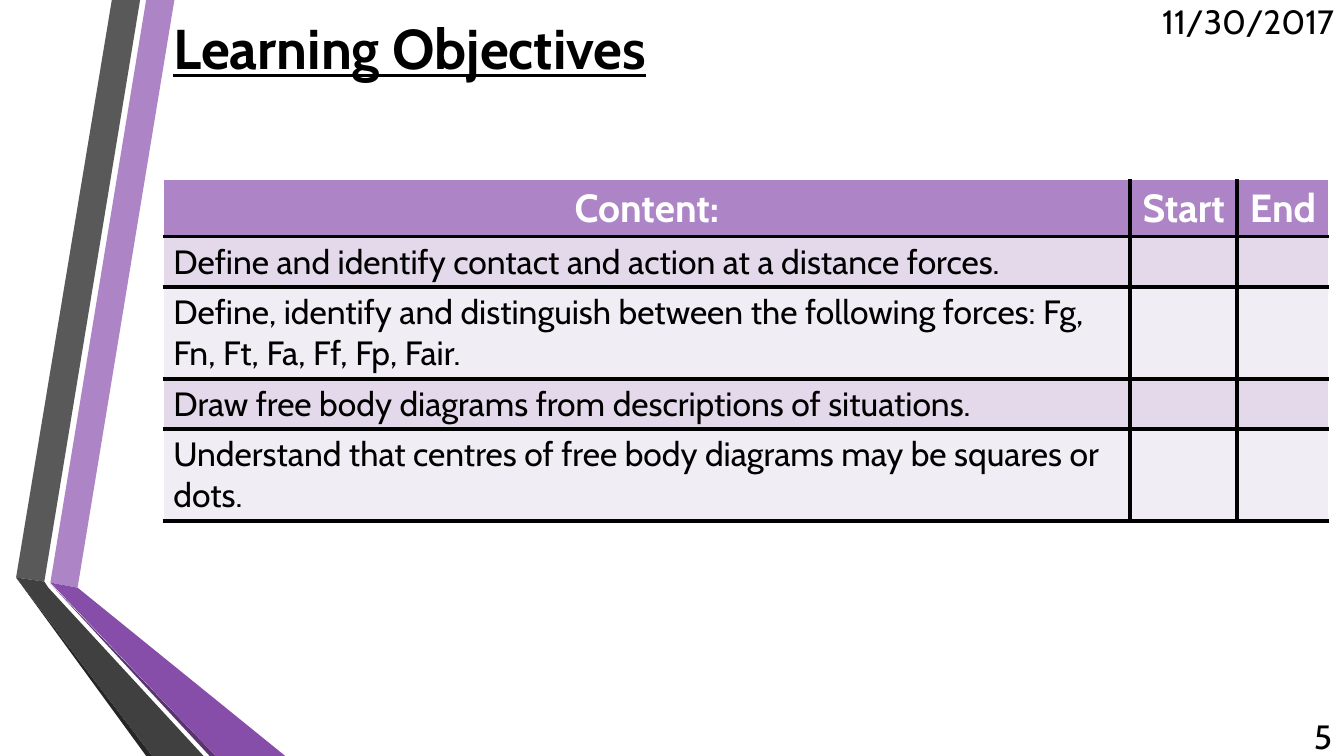
from dataclasses import dataclass

from lxml.etree import SubElement
from pptx import Presentation
from pptx.dml.color import RGBColor as Rgb
from pptx.enum.text import MSO_ANCHOR as Anchor, PP_ALIGN as Align
from pptx.oxml.ns import qn
from pptx.util import Inches, Pt

COLOURS = {
    "black": "000000", "white": "FFFFFF",
    "lilac": "AD84C6", "violet": "874EA9", "plum": "5A3471",
    "grey": "595959", "charcoal": "404040", "soot": "262626",
    "band_dark": "E3D9EA", "band_light": "F1EDF5",
}
TITLE_FORMAT = {"size": Pt(40), "bold": True, "underline": True}
HEADER_FORMAT = {"size": Pt(28), "bold": True}
BODY_FORMAT = {"size": Pt(24), "bold": False}
HEADINGS = ["Content:", "Start", "End"]
OBJECTIVES = [
    "Define and identify contact and action at a distance forces.",
    "Define, identify and distinguish between the following forces: "
    "Fg, Fn, Ft, Fa, Ff, Fp, Fair.",
    "Draw free body diagrams from descriptions of situations.",
    "Understand that centres of free body diagrams may be squares or dots.",
]
COLUMN_WIDTHS = [9.59, 1.06, 0.91]
ROW_HEIGHTS = [0.56, 0.5, 0.91, 0.5, 0.91]


@dataclass
class Ribbon:
    """A filled outline of the side decoration, in inches."""
    colour: str
    points: list[tuple[float, float]]


@dataclass
class Label:
    """A right-aligned line of text in a box."""
    text: str
    box: tuple[float, float, float, float]


RIBBONS = [
    Ribbon("lilac", [(0.5, 5.78), (0.77, 5.83), (1.73, 0), (1.45, 0)]),
    Ribbon("grey", [(1.39, 0), (1.11, 0), (0.16, 5.73), (0.44, 5.77)]),
    Ribbon("soot", [(0.16, 5.73), (1.45, 7.5), (1.51, 7.5)]),
    Ribbon("plum", [(0.5, 5.79), (2.08, 7.5), (2.14, 7.5)]),
    Ribbon("violet", [(0.5, 5.78), (2.14, 7.5), (2.83, 7.5), (0.77, 5.83)]),
    Ribbon("charcoal", [(2.02, 7.5), (0.48, 5.83), (0.44, 5.77),
                        (0.16, 5.73), (1.51, 7.5)]),
]
LABELS = [
    Label("11/30/2017", (11.29, 0.01, 2.04, 0.4)),
    Label("5", (12.58, 7.1, 0.73, 0.4)),
]


def colour_of(name: str) -> Rgb:
    """Look up a named colour."""
    return Rgb.from_string(COLOURS[name])


def write(frame, text: str, formats: dict, colour: str = "black",
          align=Align.LEFT) -> None:
    """Put one formatted paragraph into a text frame."""
    para = frame.paragraphs[0]
    para.alignment = align
    span = para.add_run()
    span.text = text
    for name, value in {"name": "Cabin", **formats}.items():
        setattr(span.font, name, value)
    span.font.color.rgb = colour_of(colour)


def draw_ribbon(page, ribbon: Ribbon) -> None:
    """Draw one closed outline without a line."""
    start, *others = [(Inches(x), Inches(y)) for x, y in ribbon.points]
    builder = page.shapes.build_freeform(*start)
    builder.add_line_segments(others, close=True)
    shape = builder.convert_to_shape()
    shape.shadow.inherit = False
    shape.fill.solid()
    shape.fill.fore_color.rgb = colour_of(ribbon.colour)
    shape.line.fill.background()


def draw_title(page) -> None:
    """Place and format the title placeholder."""
    title = page.shapes.title
    box = {"left": 1.62, "top": 0.01, "width": 10.96, "height": 0.92}
    for name, value in box.items():
        setattr(title, name, Inches(value))
    title.text_frame.vertical_anchor = Anchor.MIDDLE
    write(title.text_frame, "Learning Objectives", TITLE_FORMAT)


def draw_label(page, label: Label) -> None:
    """Draw the date or the page number."""
    frame = page.shapes.add_textbox(*map(Inches, label.box)).text_frame
    frame.word_wrap = True
    frame.vertical_anchor = Anchor.MIDDLE
    write(frame, label.text, BODY_FORMAT, align=Align.RIGHT)


def add_borders(cell, sides: list[str]) -> None:
    """Give the named sides of a cell a black 3 pt line."""
    properties = cell._tc.get_or_add_tcPr()
    for index, side in enumerate(sides):
        line = SubElement(properties, qn(f"a:ln{side}"), w=str(Pt(3)))
        fill = SubElement(line, qn("a:solidFill"))
        SubElement(fill, qn("a:srgbClr"), val=COLOURS["black"])
        properties.insert(index, line)


def draw_table(page) -> None:
    """Draw the objectives with their start and end columns."""
    rows = [HEADINGS] + [[text, "", ""] for text in OBJECTIVES]
    table = page.shapes.add_table(
        len(rows), len(HEADINGS), Inches(1.62), Inches(1.78),
        Inches(sum(COLUMN_WIDTHS)), Inches(sum(ROW_HEIGHTS))).table
    for column, width in zip(table.columns, COLUMN_WIDTHS):
        column.width = Inches(width)
    for row, height in zip(table.rows, ROW_HEIGHTS):
        row.height = Inches(height)
    for i, texts in enumerate(rows):
        band = "lilac" if i == 0 else ("band_light", "band_dark")[i % 2]
        for j, text in enumerate(texts):
            cell = table.cell(i, j)
            cell.fill.solid()
            cell.fill.fore_color.rgb = colour_of(band)
            inner = {"L": j > 0, "R": j < len(texts) - 1, "T": i > 0, "B": True}
            add_borders(cell, [side for side, drawn in inner.items() if drawn])
            if i == 0:
                cell.vertical_anchor = Anchor.MIDDLE
                write(cell.text_frame, text, HEADER_FORMAT, "white", Align.CENTER)
            elif text:
                write(cell.text_frame, text, BODY_FORMAT)


def main() -> None:
    """Build the slide and save it."""
    deck = Presentation()
    deck.slide_width, deck.slide_height = Inches(13.33), Inches(7.5)
    page = deck.slides.add_slide(deck.slide_layouts[5])
    for ribbon in RIBBONS:
        draw_ribbon(page, ribbon)
    draw_title(page)
    for label in LABELS:
        draw_label(page, label)
    draw_table(page)
    deck.save("out.pptx")


if __name__ == "__main__":
    main()
